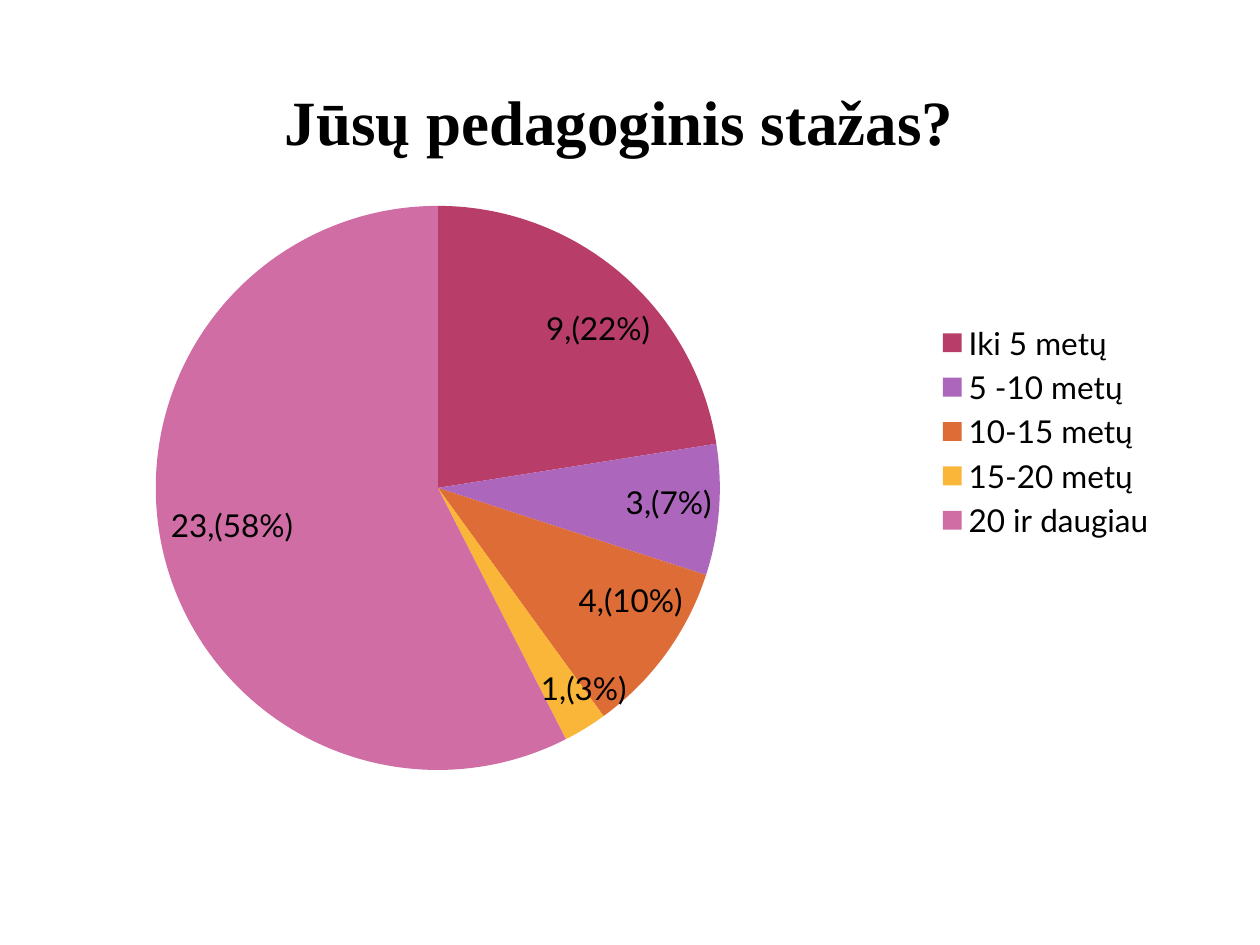
from dataclasses import dataclass

from lxml.etree import SubElement
from pptx import Presentation
from pptx.chart.data import CategoryChartData
from pptx.dml.color import RGBColor
from pptx.enum.chart import XL_CHART_TYPE, XL_LABEL_POSITION, XL_LEGEND_POSITION
from pptx.oxml.ns import qn
from pptx.util import Inches, Pt


@dataclass(frozen=True)
class Theme:
    text: str = "000000"
    body_font: str = "Lato"
    title_font: str = "Times New Roman"
    body_size: int = 18
    title_size: int = 36


THEME = Theme()
QUESTION = "Jūsų pedagoginis stažas?"
# Category, answers, label, slice colour, label shift as shares of the chart
ANSWERS = [
    ("Iki 5 metų", 9, "9,(22%)", "B83D68", (0.03, 0.04)),
    ("5 -10 metų", 3, "3,(7%)", "AC66BB", (0, -0.01)),
    ("10-15 metų", 4, "4,(10%)", "DE6C36", (0.02, -0.04)),
    ("15-20 metų", 1, "1,(3%)", "F9B639", (0.04, -0.02)),
    ("20 ir daugiau", 23, "23,(58%)", "CF6DA4", (0, -0.01)),
]


def style_font(font, name, size, bold=False):
    font.name, font.size, font.bold = name, Pt(size), bold
    font.color.rgb = RGBColor.from_string(THEME.text)


def set_layout(parent, after=None, from_edge=True, **shares):
    """Place a chart part by shares of the chart's size."""
    for old in parent.findall(qn("c:layout")):
        parent.remove(old)
    layout = SubElement(parent, qn("c:layout"))
    manual = SubElement(layout, qn("c:manualLayout"))
    if "w" in shares:
        SubElement(manual, qn("c:layoutTarget")).set("val", "inner")
    if from_edge:
        for axis in ("x", "y"):
            SubElement(manual, qn(f"c:{axis}Mode")).set("val", "edge")
    for key, share in shares.items():
        SubElement(manual, qn(f"c:{key}")).set("val", str(share))
    if after is None:
        parent.insert(0, layout)
    else:
        after.addnext(layout)


def add_slice_labels(series, labels, shifts):
    series_labels = series.data_labels
    series_labels.show_value = True
    series_labels.show_percentage = True
    labels_xml = series_labels._element
    for old in labels_xml.findall(qn("c:showLeaderLines")):
        labels_xml.remove(old)
    SubElement(labels_xml, qn("c:showLeaderLines")).set("val", "0")

    for index, (label, (dx, dy)) in enumerate(zip(labels, shifts)):
        slice_label = series.points[index].data_label
        caption = slice_label.text_frame
        caption.text = label
        style_font(caption.paragraphs[0].runs[0].font,
                   THEME.body_font, THEME.body_size)
        slice_label.position = XL_LABEL_POSITION.INSIDE_END
        label_xml = slice_label._get_or_add_dLbl()
        label_xml.find(qn("c:showPercent")).set("val", "1")
        set_layout(label_xml, label_xml.find(qn("c:idx")),
                   from_edge=False, x=dx, y=dy)


def add_answer_pie(slide, left, top, width, height):
    categories, counts, labels, colours, shifts = zip(*ANSWERS)
    data = CategoryChartData()
    data.categories = categories
    data.add_series(QUESTION, counts)
    chart = slide.shapes.add_chart(
        XL_CHART_TYPE.PIE, left, top, width, height, data).chart
    style_font(chart.font, THEME.body_font, THEME.body_size)

    # Question as chart title
    chart.has_title = True
    heading = chart.chart_title.text_frame
    heading.text = QUESTION
    style_font(heading.paragraphs[0].runs[0].font,
               THEME.title_font, THEME.title_size, bold=True)
    title_xml = chart.chart_title._element
    set_layout(title_xml, title_xml.find(qn("c:tx")), x=0.21, y=0.02)

    # Legend
    chart.has_legend = True
    chart.legend.position = XL_LEGEND_POSITION.RIGHT
    chart.legend.include_in_layout = False
    style_font(chart.legend.font, THEME.body_font, THEME.body_size)

    # Slices and their labels
    plot = chart.plots[0]
    plot.vary_by_categories = True
    set_layout(plot._element.getparent(), x=0.1, y=0.2, w=0.51, h=0.75)
    series = plot.series[0]
    for index, colour in enumerate(colours):
        fill = series.points[index].format.fill
        fill.solid()
        fill.fore_color.rgb = RGBColor.from_string(colour)
    add_slice_labels(series, labels, shifts)


def main():
    prs = Presentation()
    prs.slide_width, prs.slide_height = Inches(10), Inches(7.5)
    slide = prs.slides.add_slide(prs.slide_layouts[6])
    add_answer_pie(slide, Inches(0.28), Inches(0.44), Inches(9), Inches(5.97))
    prs.save("out.pptx")


if __name__ == "__main__":
    main()
